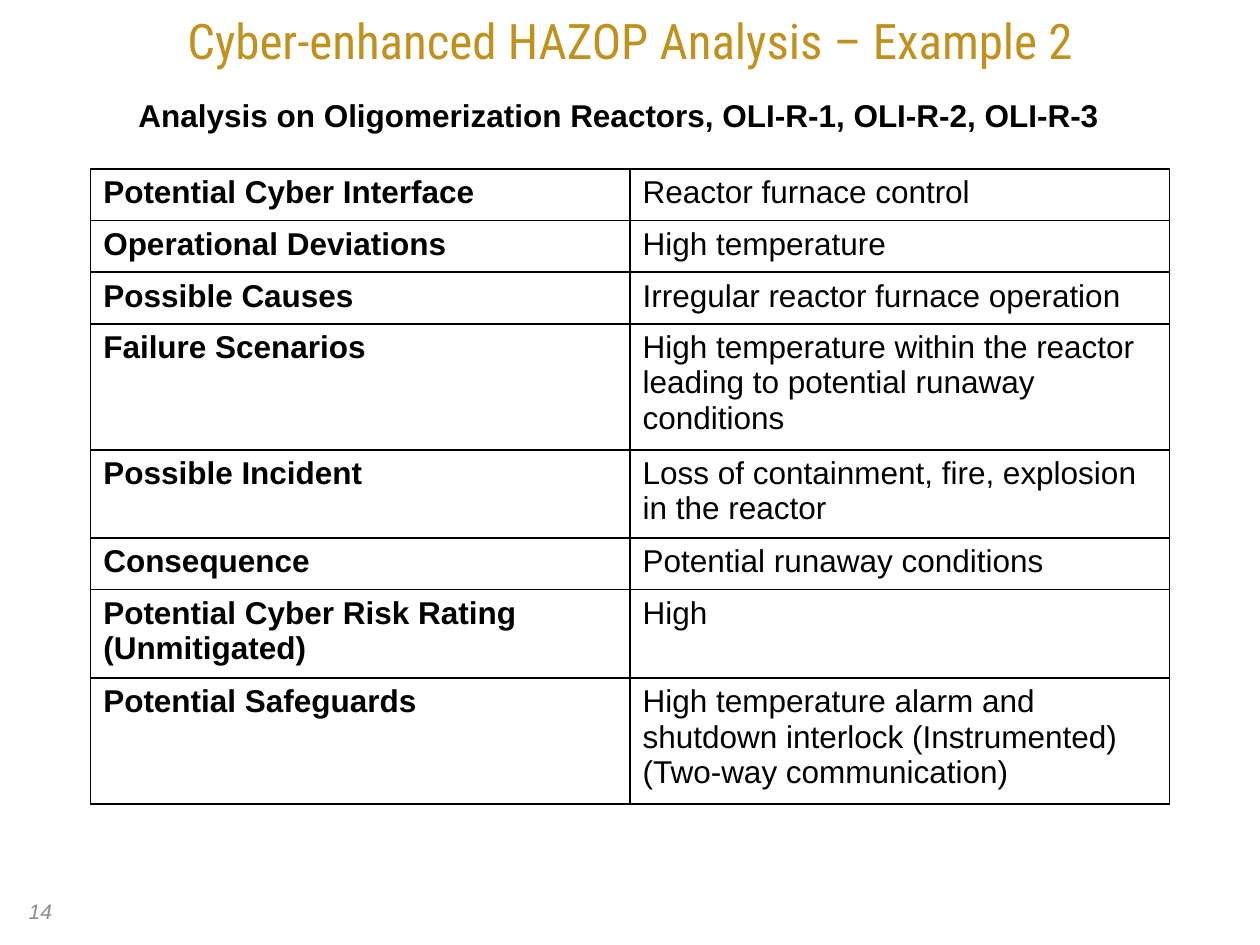
from lxml import etree
from pptx import Presentation
from pptx.dml.color import RGBColor
from pptx.enum import text
from pptx.oxml.ns import qn
from pptx.util import Inches, Pt


def write(frame, words, color="000000", align=text.PP_ALIGN.LEFT, **font_format):
    paragraph = frame.paragraphs[0]
    paragraph.text = words
    paragraph.alignment = align
    values = {"name": "Arial", "size": Pt(18), "bold": False, **font_format}
    for name, value in values.items():
        setattr(paragraph.runs[0].font, name, value)
    paragraph.runs[0].font.color.rgb = RGBColor.from_string(color)


def add_borders(cell, color="000000", width=Pt(1)):
    properties = cell._tc.get_or_add_tcPr()
    for position, side in enumerate(("lnL", "lnR", "lnT", "lnB")):
        line = etree.Element(qn(f"a:{side}"), w=str(width))
        fill = etree.SubElement(line, qn("a:solidFill"))
        etree.SubElement(fill, qn("a:srgbClr"), val=color)
        properties.insert(position, line)


presentation = Presentation()
presentation.slide_width = Inches(10)
presentation.slide_height = Inches(7.5)
slide = presentation.slides.add_slide(presentation.slide_layouts[5])

title = slide.shapes.title
title.left, title.top, title.width, title.height = map(Inches, (0, 0.08, 10, 0.59))
title_format = {"margin_left": 0, "margin_top": 0, "margin_right": 0, "margin_bottom": 0,
                "vertical_anchor": text.MSO_ANCHOR.TOP, "word_wrap": True,
                "auto_size": text.MSO_AUTO_SIZE.NONE}
for name, value in title_format.items():
    setattr(title.text_frame, name, value)
write(title.text_frame, "Cyber-enhanced HAZOP Analysis – Example 2", "C1911E",
      text.PP_ALIGN.CENTER, name="Roboto Condensed", size=Pt(28))

subtitle = slide.shapes.add_textbox(Inches(1), Inches(0.71), Inches(8.01), Inches(0.4))
subtitle.text_frame.word_wrap = True
subtitle.text_frame.auto_size = text.MSO_AUTO_SIZE.SHAPE_TO_FIT_TEXT
write(subtitle.text_frame, "Analysis on Oligomerization Reactors, OLI-R-1, OLI-R-2, OLI-R-3", bold=True)

page_number = slide.shapes.add_textbox(Inches(0.13), Inches(7.03), Inches(2.33), Inches(0.4))
page_number.text_frame.word_wrap = True
page_number.text_frame.vertical_anchor = text.MSO_ANCHOR.MIDDLE
write(page_number.text_frame, "14", "8C8C8C", size=Pt(12), italic=True)

row_heights = {1: 0.41, 2: 0.7, 3: 1}
analysis = [
    ("Potential Cyber Interface", "Reactor furnace control", 1),
    ("Operational Deviations", "High temperature", 1),
    ("Possible Causes", "Irregular reactor furnace operation", 1),
    ("Failure Scenarios", "High temperature within the reactor leading to potential runaway conditions", 3),
    ("Possible Incident", "Loss of containment, fire, explosion in the reactor", 2),
    ("Consequence", "Potential runaway conditions", 1),
    ("Potential Cyber Risk Rating (Unmitigated)", "High", 2),
    ("Potential Safeguards",
     "High temperature alarm and shutdown interlock (Instrumented) (Two-way communication)", 3),
]
table = slide.shapes.add_table(len(analysis), 2, Inches(0.72), Inches(1.34),
                               Inches(8.56), Inches(5.02)).table
table.first_row = False
table.horz_banding = False
for row, (topic, finding, line_count) in enumerate(analysis):
    table.rows[row].height = Inches(row_heights[line_count])
    for column, words in enumerate((topic, finding)):
        cell = table.cell(row, column)
        cell.fill.background()
        add_borders(cell)
        write(cell.text_frame, words, bold=column == 0)

presentation.save("out.pptx")
